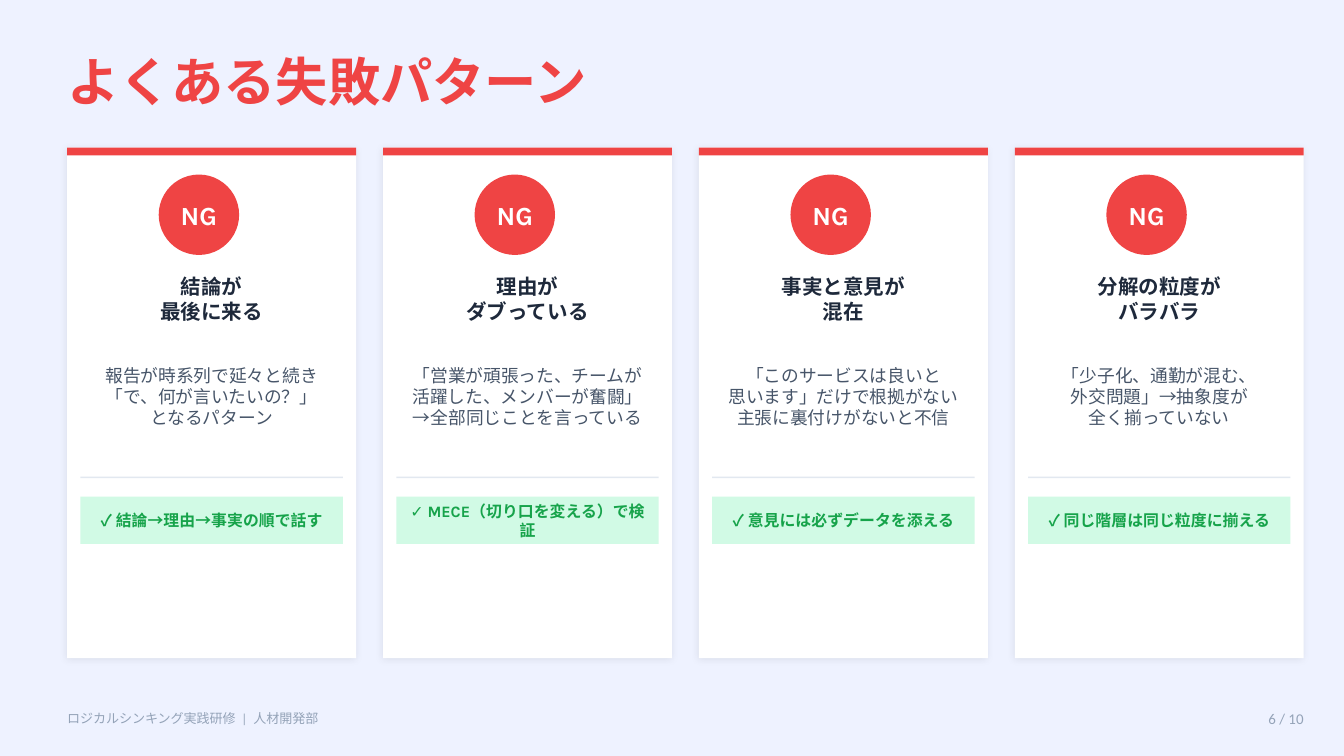
import pptx
import pptx.util
import pptx.dml.color
import pptx.enum.shapes
import pptx.enum.text
import lxml.etree
from dataclasses import dataclass

Cm, Pt = pptx.util.Cm, pptx.util.Pt
SHAPE = pptx.enum.shapes.MSO_SHAPE
ALIGN = pptx.enum.text.PP_ALIGN


@dataclass(frozen=True)
class Theme:
    background: str = "EEF2FF"
    card: str = "FFFFFF"
    danger: str = "EF4444"
    heading: str = "1E293B"
    body: str = "475569"
    muted: str = "94A3B8"
    rule: str = "E2E8F0"
    fix_fill: str = "D1FAE5"
    fix_text: str = "16A34A"
    display_font: str = "Karla"
    text_font: str = "Calibri"
    title_size: float = 28
    mark_size: float = 14
    heading_size: float = 11
    body_size: float = 9.5
    fix_size: float = 8.5
    page_size: float = 8
    footer_size: float = 7


THEME = Theme()

PATTERNS = [
    (["結論が", "最後に来る"],
     ["報告が時系列で延々と続き", "「で、何が言いたいの？」", "となるパターン"],
     "✓ 結論→理由→事実の順で話す"),
    (["理由が", "ダブっている"],
     ["「営業が頑張った、チームが", "活躍した、メンバーが奮闘」", "→全部同じことを言っている"],
     "✓ MECE（切り口を変える）で検証"),
    (["事実と意見が", "混在"],
     ["「このサービスは良いと", "思います」だけで根拠がない", "主張に裏付けがないと不信"],
     "✓ 意見には必ずデータを添える"),
    (["分解の粒度が", "バラバラ"],
     ["「少子化、通勤が混む、", "外交問題」→抽象度が", "全く揃っていない"],
     "✓ 同じ階層は同じ粒度に揃える"),
]


def rgb(color):
    return pptx.dml.color.RGBColor.from_string(color)


def write(sp, lines, size, color, font, bold=False, align=ALIGN.CENTER, inset=(0, 0)):
    tf = sp.text_frame
    tf.word_wrap = True
    tf.vertical_anchor = pptx.enum.text.MSO_ANCHOR.MIDDLE
    tf.margin_left = tf.margin_right = Cm(inset[0])
    tf.margin_top = tf.margin_bottom = Cm(inset[1])
    for i, line in enumerate(lines):
        p = tf.paragraphs[0] if i == 0 else tf.add_paragraph()
        p.text = line
        p.alignment = align
        p.font.size = Pt(size)
        p.font.name = font
        p.font.bold = bold
        p.font.color.rgb = rgb(color)


def add_text(s, box, lines, *style, **options):
    write(s.shapes.add_textbox(*map(Cm, box)), lines, *style, **options)


def add_block(s, box, fill, kind=SHAPE.RECTANGLE):
    sp = s.shapes.add_shape(kind, *map(Cm, box))
    sp.shadow.inherit = False
    sp.fill.solid()
    sp.fill.fore_color.rgb = rgb(fill)
    sp.line.fill.background()
    return sp


def add_soft_shadow(sp):
    ns = "{http://schemas.openxmlformats.org/drawingml/2006/main}"
    effects = sp._element.spPr.find(ns + "effectLst")
    shadow = lxml.etree.SubElement(
        effects, ns + "outerShdw", blurRad=str(Pt(4)), dist=str(Pt(1)),
        dir=str(135 * 60000), algn="bl", rotWithShape="0")
    black = lxml.etree.SubElement(shadow, ns + "srgbClr", val="000000")
    lxml.etree.SubElement(black, ns + "alpha", val="8000")


def add_title(s, box, title):
    add_text(s, box, [title], THEME.title_size, THEME.danger, THEME.display_font,
             bold=True, align=ALIGN.LEFT)


def add_card(s, box, heading, body, fix):
    x, y, w, h = box
    pad, text_pad = 0.25, 0.38
    inner, text_w = w - 2 * pad, w - 2 * text_pad

    # Panel with top accent
    add_soft_shadow(add_block(s, box, THEME.card))
    add_block(s, (x, y, w, 0.15), THEME.danger)

    # NG mark
    mark = add_block(s, (x + 1.73, y + 0.51, 1.52, 1.52), THEME.danger, SHAPE.OVAL)
    write(mark, ["NG"], THEME.mark_size, THEME.card, THEME.display_font, bold=True)

    # Heading and description
    add_text(s, (x + pad, y + 2.29, inner, 1.14), heading,
             THEME.heading_size, THEME.heading, THEME.display_font, bold=True)
    add_text(s, (x + text_pad, y + 3.56, text_w, 2.29), body,
             THEME.body_size, THEME.body, THEME.text_font)

    # Divider and remedy
    add_block(s, (x + pad, y + 6.22, inner, 0.03), THEME.rule)
    remedy = add_block(s, (x + pad, y + 6.6, inner, 0.89), THEME.fix_fill)
    write(remedy, [fix], THEME.fix_size, THEME.fix_text, THEME.display_font,
          bold=True, inset=(text_pad - pad, 0))


def add_cards(s, box, patterns, gap):
    x, y, w, h = box
    card_w = (w - gap * (len(patterns) - 1)) / len(patterns)
    for i, pattern in enumerate(patterns):
        add_card(s, (x + i * (card_w + gap), y, card_w, h), *pattern)


def add_footer(s, box, label, page):
    x, y, w, h = box
    page_w, inset = 1.78, (0.25, 0.13)
    add_text(s, (x + w - page_w, y, page_w, h), [page], THEME.page_size,
             THEME.muted, THEME.text_font, align=ALIGN.RIGHT, inset=inset)
    add_text(s, (x, y, 12.7, h), [label], THEME.footer_size,
             THEME.muted, THEME.text_font, align=ALIGN.LEFT, inset=inset)


def main():
    prs = pptx.Presentation()
    prs.slide_width, prs.slide_height = Cm(25.4), Cm(14.29)
    s = prs.slides.add_slide(prs.slide_layouts[6])
    s.background.fill.solid()
    s.background.fill.fore_color.rgb = rgb(THEME.background)

    add_title(s, (1.27, 0.76, 22.86, 1.52), "よくある失敗パターン")
    add_cards(s, (1.27, 2.79, 23.37, 9.65), PATTERNS, gap=0.51)
    add_footer(s, (1.02, 13.26, 23.87, 0.64),
               "ロジカルシンキング実践研修  |  人材開発部", "6 / 10")
    prs.save("out.pptx")


if __name__ == "__main__":
    main()
